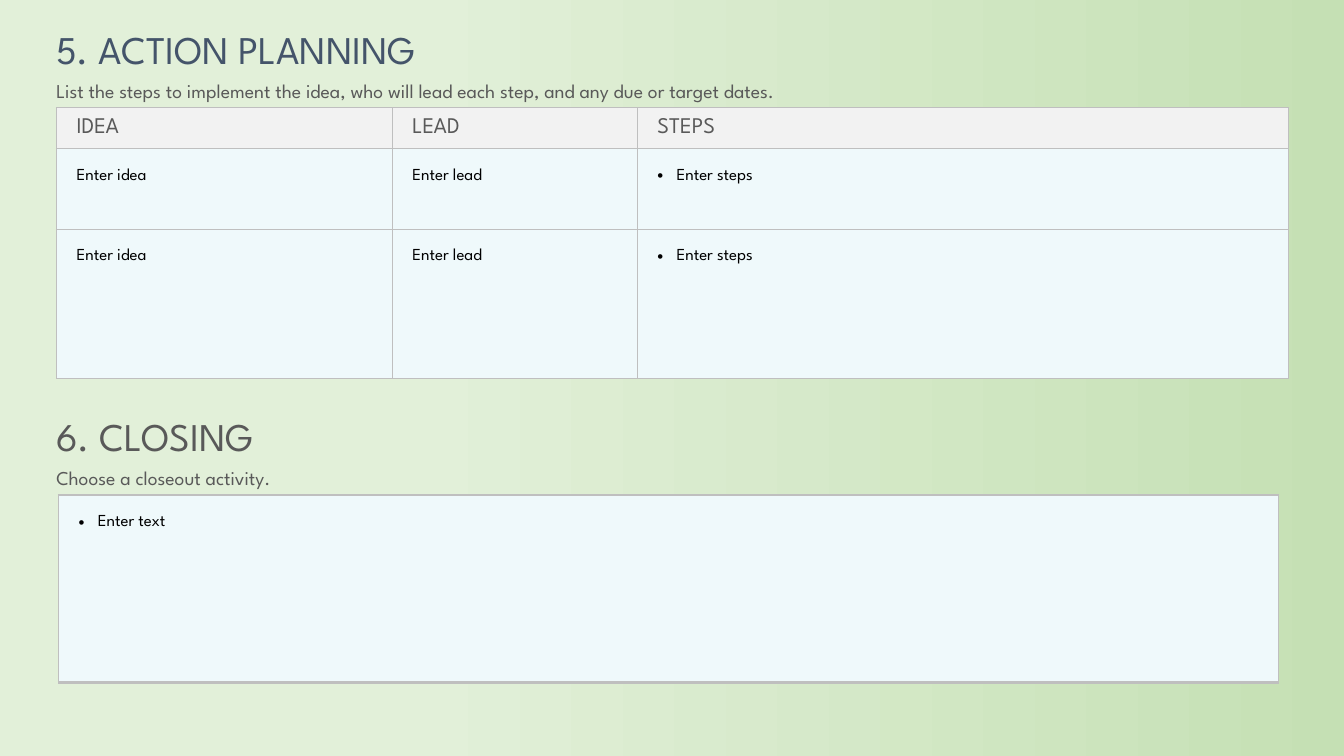
from lxml.etree import SubElement
from pptx import Presentation
from pptx.dml.color import RGBColor
from pptx.enum.text import MSO_ANCHOR, MSO_AUTO_SIZE
from pptx.oxml.ns import qn
from pptx.util import Inches, Pt

COLORS = {
    "sage": "C5E0B4", "mint": "E2F0D9", "border": "BFBFBF", "header": "F2F2F2",
    "entry": "EFF9FB", "slate": "44546A", "gray": "595959", "black": "000000",
}
FONT = "League Spartan"


def style_text(paragraph, size, color, spacing=None, bullet=False):
    paragraph.line_spacing = spacing
    for run in paragraph.runs:
        run.font.size = Pt(size)
        run.font.name = FONT
        run.font.color.rgb = RGBColor.from_string(COLORS[color])
    if bullet:
        properties = paragraph._p.get_or_add_pPr()
        properties.set("marL", str(Inches(0.19)))
        properties.set("indent", str(-Inches(0.19)))
        SubElement(properties, qn("a:buFont"), typeface="Arial")
        SubElement(properties, qn("a:buChar"), char="•")


def add_grid(left, top, columns, rows, entries, has_header, bottom_width):
    grid = slide.shapes.add_table(
        len(rows), len(columns), Inches(left), Inches(top),
        Inches(sum(columns)), Inches(sum(rows))).table
    grid.first_row = has_header
    grid.horz_banding = False
    for column, width in zip(grid.columns, columns):
        column.width = Inches(width)
    for row_index, (row, height) in enumerate(zip(grid.rows, rows)):
        row.height = Inches(height)
        is_header = has_header and row_index == 0
        for cell, entry in zip(row.cells, entries[row_index]):
            cell.margin_left = Inches(0.2)
            cell.margin_right = cell.margin_top = cell.margin_bottom = Inches(0.1)
            for side in ("L", "R", "T", "B"):
                width = bottom_width if side == "B" else 1
                edge = SubElement(cell._tc.get_or_add_tcPr(), qn(f"a:ln{side}"), w=str(Pt(width)))
                edge_fill = SubElement(edge, qn("a:solidFill"))
                SubElement(edge_fill, qn("a:srgbClr"), val=COLORS["border"])
            cell.fill.solid()
            cell.fill.fore_color.rgb = RGBColor.from_string(COLORS["header" if is_header else "entry"])
            cell.text_frame.text = entry
            paragraph = cell.text_frame.paragraphs[0]
            if is_header:
                style_text(paragraph, 16, "gray")
            else:
                style_text(paragraph, 12, "black", Pt(18), entry in ("Enter steps", "Enter text"))


deck = Presentation()
deck.slide_width, deck.slide_height = Inches(13.33), Inches(7.5)
slide = deck.slides.add_slide(deck.slide_layouts[6])

backdrop = slide.background.fill
backdrop.gradient()
backdrop.gradient_angle = 180
for stop, color, position in zip(backdrop.gradient_stops, ("sage", "mint"), (0, 0.69)):
    stop.color.rgb = RGBColor.from_string(COLORS[color])
    stop.position = position

plan_entries = [["IDEA", "LEAD", "STEPS"]] + [["Enter idea", "Enter lead", "Enter steps"]] * 2
add_grid(0.56, 1.07, [3.33, 2.43, 6.46], [0.36, 0.8, 1.48], plan_entries, True, 1)
add_grid(0.58, 4.91, [12.1], [1.86], [["Enter text"]], False, 3)

sections = [
    (0.13, "5. ACTION PLANNING", 4.25, "slate",
     "List the steps to implement the idea, who will lead each step, and any due or target dates."),
    (3.97, "6. CLOSING", 2.4, "gray", "Choose a closeout activity."),
]
for top, title, title_width, title_color, instruction in sections:
    lines = [
        (title, top, title_width, 0.61, 28, title_color, 1.15, False, MSO_ANCHOR.TOP),
        (instruction, top + 0.6, 12.22, 0.34, 14, "gray", None, True, MSO_ANCHOR.MIDDLE),
    ]
    for text, line_top, width, height, size, color, spacing, wraps, anchor in lines:
        frame = slide.shapes.add_textbox(
            Inches(0.46), Inches(line_top), Inches(width), Inches(height)).text_frame
        frame.text = text
        frame.word_wrap = wraps
        frame.auto_size = MSO_AUTO_SIZE.SHAPE_TO_FIT_TEXT
        frame.vertical_anchor = anchor
        style_text(frame.paragraphs[0], size, color, spacing)

deck.save("out.pptx")
